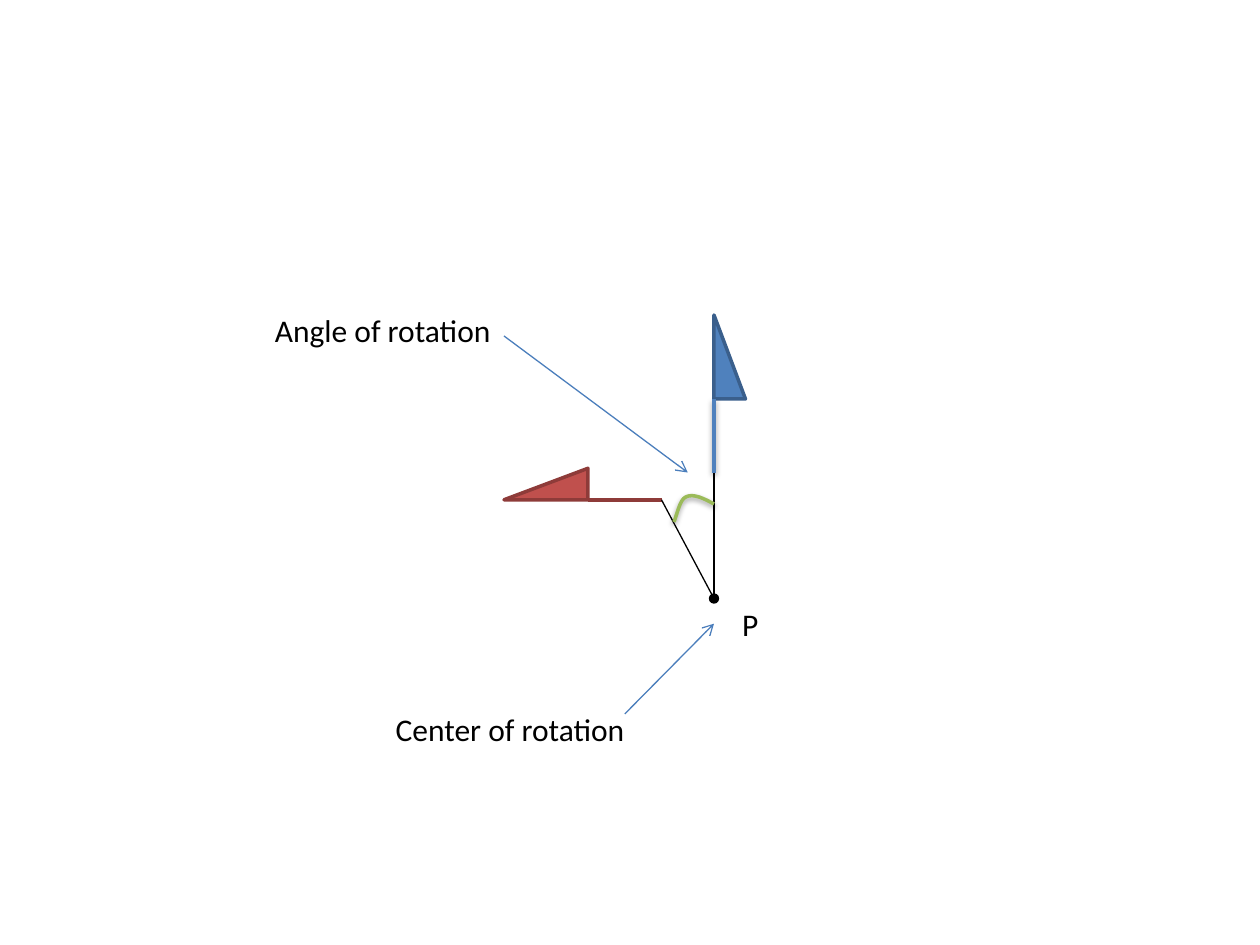
from lxml import etree
from pptx import Presentation, util as u
from pptx.dml.color import RGBColor
from pptx.enum import shapes, text
from pptx.oxml import parse_xml
from pptx.oxml.ns import nsdecls, qn

BLACK = RGBColor(0, 0, 0)
BLUE = RGBColor(0x4F, 0x81, 0xBD)
DARK_BLUE = RGBColor(0x3A, 0x5F, 0x8C)
ARROW_BLUE = RGBColor(0x4B, 0x7E, 0xBC)
RED = RGBColor(0xC0, 0x50, 0x4D)
DARK_RED = RGBColor(0x8E, 0x3B, 0x39)
GREEN = RGBColor(0x9B, 0xBB, 0x59)

presentation = Presentation()
presentation.slide_width = u.Inches(10)
presentation.slide_height = u.Inches(7.5)
slide = presentation.slides.add_slide(presentation.slide_layouts[6])

COLUMNS = 120
CELL = presentation.slide_width // COLUMNS
SHADOW = (
    f'<a:outerShdw {nsdecls("a")} blurRad="39370" dist="20320" dir="5400000" rotWithShape="0">'
    '<a:srgbClr val="000000"><a:alpha val="38000"/></a:srgbClr></a:outerShdw>'
)


def cells(*values):
    return [round(value * CELL) for value in values]


def style_line(shape, color, width, tail=None, shadow=False):
    shape.line.color.rgb = color
    shape.line.width = u.Pt(width)
    properties = shape.element.spPr
    if tail:
        etree.SubElement(properties.find(qn("a:ln")), qn("a:tailEnd"), type=tail)
    effects = properties.find(qn("a:effectLst"))
    if effects is None:
        effects = etree.SubElement(properties, qn("a:effectLst"))
    if shadow:
        effects.append(parse_xml(SHADOW))


flags = [
    ((68, 30, 3, 8), 0, BLUE, DARK_BLUE, (68, 38, 68, 45), BLUE, True),
    ((50.5, 42.1, 3, 8), 270, RED, DARK_RED, (56, 47.6, 63, 47.6), DARK_RED, False),
]
for box, rotation, fill, outline, pole_ends, pole_color, shadow in flags:
    group = slide.shapes.add_group_shape()
    flag = group.shapes.add_shape(shapes.MSO_SHAPE.RIGHT_TRIANGLE, *cells(*box))
    flag.rotation = rotation
    flag.shadow.inherit = False
    flag.fill.solid()
    flag.fill.fore_color.rgb = fill
    style_line(flag, outline, 2)
    pole = group.shapes.add_connector(shapes.MSO_CONNECTOR.STRAIGHT, *cells(*pole_ends))
    style_line(pole, pole_color, 2, shadow=shadow)

lines = [
    ((68, 45, 68, 57), BLACK, None),
    ((63, 47.6, 68, 57), BLACK, "oval"),
    ((59.5, 68, 68, 59.4), ARROW_BLUE, "arrow"),
    ((48, 32, 65.5, 45), ARROW_BLUE, "arrow"),
]
for ends, color, tail in lines:
    line = slide.shapes.add_connector(shapes.MSO_CONNECTOR.STRAIGHT, *cells(*ends))
    style_line(line, color, 0.75, tail)

STEPS = 16
curves = [
    ((68, 48), (67.1, 47.5), (66.1, 47), (65.4, 47.3)),
    ((65.4, 47.3), (64.8, 47.5), (64.6, 48.6), (64.2, 49.7)),
]
arc_points = []
for controls in curves:
    for step in range(1, STEPS + 1):
        t = step / STEPS
        weights = ((1 - t) ** 3, 3 * t * (1 - t) ** 2, 3 * t**2 * (1 - t), t**3)
        point = [sum(w * c for w, c in zip(weights, axis)) for axis in zip(*controls)]
        arc_points.append(tuple(cells(*point)))
builder = slide.shapes.build_freeform(*cells(*curves[0][0]))
builder.add_line_segments(arc_points, close=False)
arc = builder.convert_to_shape()
arc.shadow.inherit = False
arc.fill.background()
style_line(arc, GREEN, 2, shadow=True)

labels = [
    ("P", (69.5, 57, 5.5, 4.8)),
    ("Center of rotation", (36.5, 67, 25.4, 4.8)),
    ("Angle of rotation", (25, 29, 28, 5)),
]
frame_format = {"word_wrap": True, "auto_size": text.MSO_AUTO_SIZE.SHAPE_TO_FIT_TEXT}
font_format = {"name": "Calibri", "size": u.Pt(18)}
for wording, box in labels:
    frame = slide.shapes.add_textbox(*cells(*box)).text_frame
    for name, value in frame_format.items():
        setattr(frame, name, value)
    paragraph = frame.paragraphs[0]
    run = paragraph.add_run()
    run.text = wording
    for name, value in font_format.items():
        setattr(run.font, name, value)
    run.font.color.rgb = BLACK

presentation.save("out.pptx")
